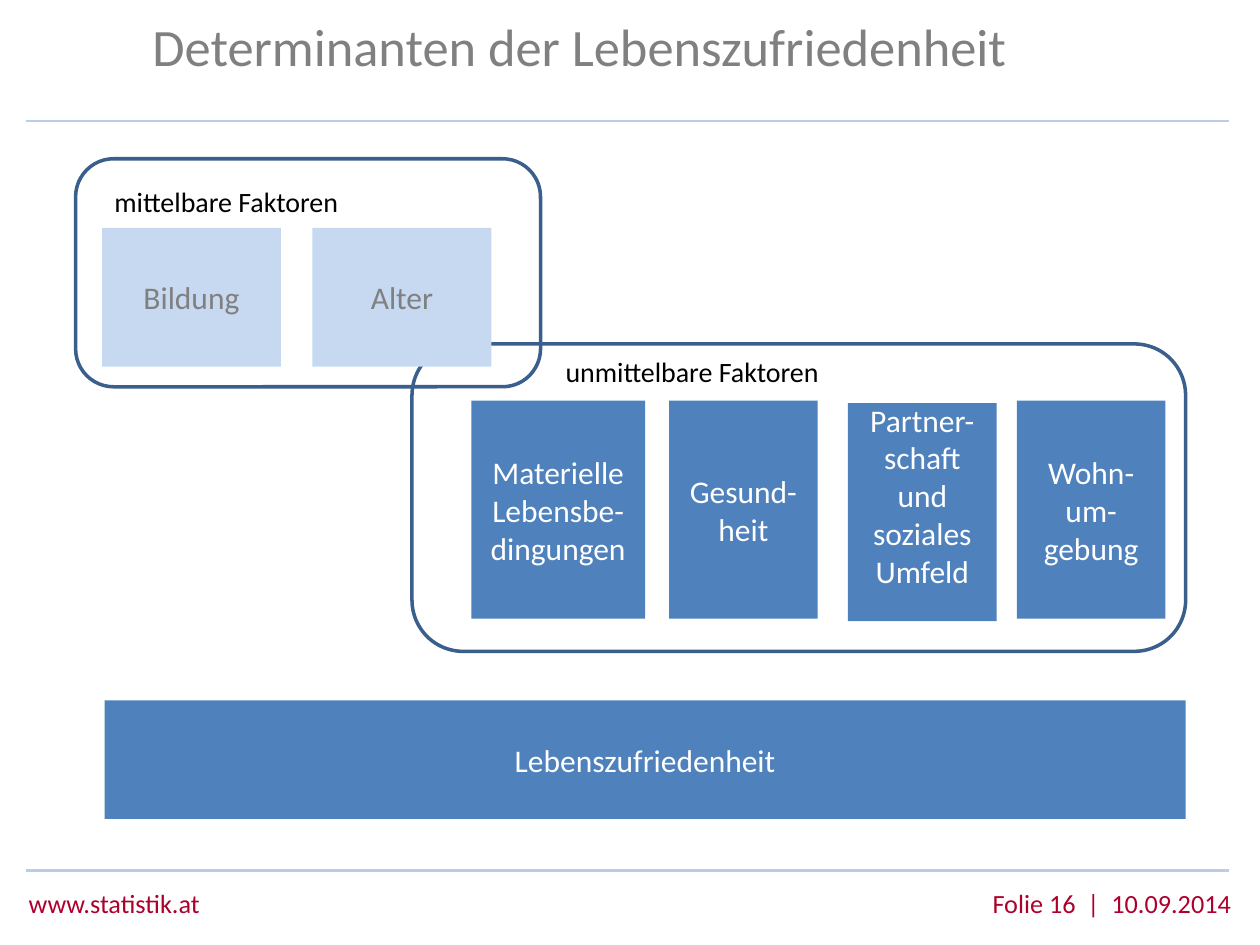
from lxml.etree import SubElement
from pptx import Presentation
from pptx.dml.color import RGBColor
from pptx.enum.shapes import MSO_CONNECTOR, MSO_SHAPE
from pptx.enum.text import MSO_ANCHOR, PP_ALIGN
from pptx.oxml.ns import qn
from pptx.util import Inches, Pt

TITLE = "Determinanten der Lebenszufriedenheit"
BLUE, PALE, GREY, WHITE = "4F81BD", "C6D9F1", "808080", "FFFFFF"
RED, RULE, EDGE, BLACK = "AE002C", "B9CDE5", "3A5F8C", "000000"

RULES = [0.96, 6.91]
FRAMES = [(3.27, 2.73, 6.14, 2.44), (0.6, 1.26, 3.69, 1.81)]
BOXES = [
    ("Lebenszufriedenheit", (0.83, 5.56, 8.58, 0.94), BLUE, WHITE),
    ("Alter", (2.48, 1.81, 1.42, 1.1), PALE, GREY),
    ("Bildung", (0.81, 1.81, 1.42, 1.1), PALE, GREY),
    ("Materielle Lebensbe-dingungen", (3.74, 3.18, 1.38, 1.73), BLUE, WHITE),
    ("Gesund-heit", (5.31, 3.18, 1.18, 1.73), BLUE, WHITE),
    ("Partner-schaft und soziales Umfeld", (6.73, 3.2, 1.18, 1.73), BLUE, WHITE),
    ("Wohn-um-gebung", (8.07, 3.18, 1.18, 1.73), BLUE, WHITE),
]
LABELS = [
    ("unmittelbare Faktoren", (4.39, 2.75, 2.25, 0.4), 16, BLACK, PP_ALIGN.LEFT),
    ("mittelbare Faktoren", (0.81, 1.4, 2.13, 0.4), 16, BLACK, PP_ALIGN.LEFT),
    ("www.statistik.at", (0.13, 6.99, 2.27, 0.35), 15, RED, PP_ALIGN.LEFT),
    ("Folie 16  |  10.09.2014", (6.25, 6.99, 3.62, 0.35), 15, RED, PP_ALIGN.RIGHT),
]


def color(code):
    return RGBColor.from_string(code)


def place(area):
    return [Inches(v) for v in area]


def write(shape, text, size, code, align):
    frame = shape.text_frame
    frame.word_wrap = True
    frame.vertical_anchor = MSO_ANCHOR.MIDDLE
    frame.text = text
    para = frame.paragraphs[0]
    para.alignment = align
    para.font.name = "Calibri"
    para.font.size = Pt(size)
    para.font.color.rgb = color(code)
    return frame


def add_rule(shapes, y):
    line = shapes.add_connector(MSO_CONNECTOR.STRAIGHT, *place((0.21, y, 9.75, y)))
    line.line.color.rgb = color(RULE)
    line.line.width = Pt(1.5)
    SubElement(line._element.spPr, qn("a:effectLst"))


def add_frame(shapes, area):
    shape = shapes.add_shape(MSO_SHAPE.ROUNDED_RECTANGLE, *place(area))
    shape.shadow.inherit = False
    shape.fill.background()
    shape.line.color.rgb = color(EDGE)
    shape.line.width = Pt(2)


def add_box(shapes, text, area, fill, ink):
    shape = shapes.add_shape(MSO_SHAPE.RECTANGLE, *place(area))
    shape.shadow.inherit = False
    shape.fill.solid()
    shape.fill.fore_color.rgb = color(fill)
    shape.line.fill.background()
    frame = write(shape, text, 18, ink, PP_ALIGN.CENTER)
    if text.startswith("Partner"):
        frame.margin_top, frame.margin_bottom = place((0, 0.27))


def main():
    deck = Presentation()
    deck.slide_width, deck.slide_height = place((10, 7.5))
    shapes = deck.slides.add_slide(deck.slide_layouts[5]).shapes
    title = shapes.title
    title.left, title.top, title.width, title.height = place((1.11, 0.14, 7.35, 0.53))
    frame = write(title, TITLE, 30, GREY, PP_ALIGN.LEFT)
    frame.paragraphs[0].line_spacing = Pt(30)
    for y in RULES:
        add_rule(shapes, y)
    for area in FRAMES:
        add_frame(shapes, area)
    for box in BOXES:
        add_box(shapes, *box)
    for text, area, size, code, align in LABELS:
        write(shapes.add_textbox(*place(area)), text, size, code, align)
    deck.save("out.pptx")


if __name__ == "__main__":
    main()
